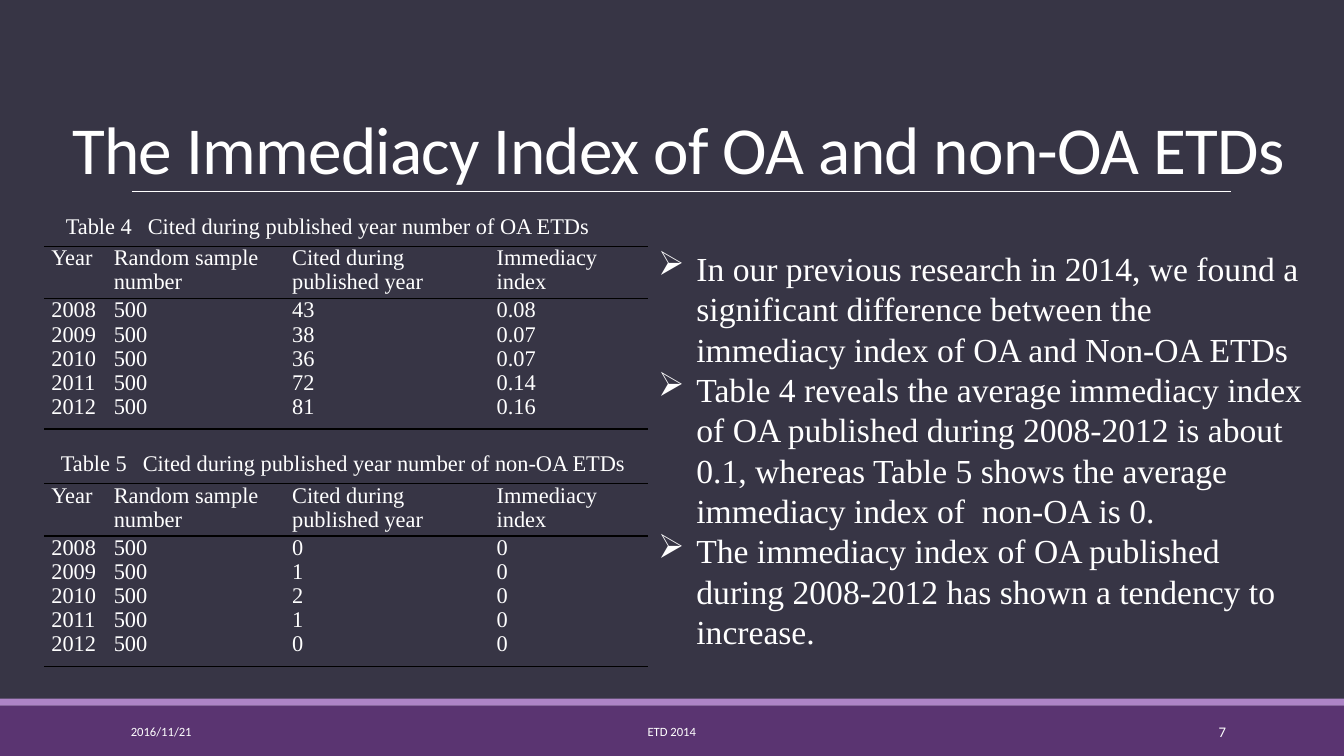
from lxml.etree import SubElement
from pptx import Presentation
from pptx.dml.color import RGBColor
from pptx.enum.shapes import MSO_CONNECTOR as Connector, MSO_SHAPE as Preset
from pptx.enum.text import MSO_ANCHOR as Anchor, MSO_AUTO_SIZE as AutoSize, PP_ALIGN as Align
from pptx.oxml.ns import qn
from pptx.util import Inches, Pt

SLATE = RGBColor(0x37, 0x35, 0x45)
PURPLE = RGBColor(0x5A, 0x34, 0x71)
LILAC = RGBColor(0xAD, 0x84, 0xC6)
WHITE = RGBColor(0xFF, 0xFF, 0xFF)
BLACK = RGBColor(0x00, 0x00, 0x00)

COLUMN_WIDTHS = [4.65, 13.27, 15.22, 11.78]
ROW_HEIGHTS = [6.6, 16.53]
HEADINGS = ["Year", "Random sample number", "Cited during published year", "Immediacy index"]
YEARS = ["2008", "2009", "2010", "2011", "2012"]
SAMPLES = ["500"] * len(YEARS)
TABLES = [
    (3.3, 32.6, [YEARS, SAMPLES, ["43", "38", "36", "72", "81"],
                 ["0.08", "0.07", "0.07", "0.14", "0.16"]]),
    (3.3, 64, [YEARS, SAMPLES, ["0", "1", "2", "1", "0"], ["0"] * len(YEARS)]),
]
CAPTIONS = [
    (4.16, 27.47, "Table 4\tCited during published year number of OA ETDs"),
    (3.79, 58.8, "Table 5\tCited during published year number of non-OA ETDs"),
]
FOOTERS = [
    (9, 20.25, "2016/11/21", 9, Align.LEFT),
    (30.22, 39.53, "ETD 2014", 9, Align.CENTER),
    (81.22, 10.73, "7", 10.5, Align.RIGHT),
]
FINDINGS = [
    "In our previous research in 2014, we found a significant difference between the "
    "immediacy index of OA and Non-OA ETDs",
    "Table 4 reveals the average immediacy index of OA published during 2008-2012 is about "
    "0.1, whereas Table 5 shows the average immediacy index of  non-OA is 0.",
    "The immediacy index of OA published during 2008-2012 has shown a tendency to increase.",
]


def write(frame, lines, size=16, font="Times New Roman", color=WHITE, align=Align.LEFT,
          anchor=Anchor.TOP, spacing=None, tracking=None, bullet=None, indent=0, tab=None):
    frame.word_wrap = True
    frame.vertical_anchor = anchor
    for index, line in enumerate(lines):
        paragraph = frame.paragraphs[0] if index == 0 else frame.add_paragraph()
        paragraph.alignment = align
        paragraph.line_spacing = spacing
        run = paragraph.add_run()
        run.text = line
        run.font.size = Pt(size)
        run.font.name = font
        run.font.color.rgb = color
        if tracking is not None:
            run.font._element.set("spc", str(tracking))
        properties = paragraph._p.get_or_add_pPr()
        if bullet:
            properties.set("marL", str(indent))
            properties.set("indent", str(-indent))
            SubElement(properties, qn("a:buChar"), char=bullet)
        if tab:
            stops = SubElement(properties, qn("a:tabLst"))
            SubElement(stops, qn("a:tab"), pos=str(tab), algn="l")


class Board:
    def __init__(self, presentation):
        self.width = presentation.slide_width
        self.height = presentation.slide_height
        self.slide = presentation.slides.add_slide(presentation.slide_layouts[5])
        self.slide.background.fill.solid()
        self.slide.background.fill.fore_color.rgb = SLATE

    def across(self, percent):
        return round(self.width * percent / 100)

    def down(self, percent):
        return round(self.height * percent / 100)

    def area(self, left, top, width, height):
        return self.across(left), self.down(top), self.across(width), self.down(height)

    def title(self, area, text, **style):
        shape = self.slide.shapes.title
        shape.left, shape.top, shape.width, shape.height = self.area(*area)
        shape.text_frame.auto_size = AutoSize.NONE
        write(shape.text_frame, [text], **style)

    def band(self, area, color):
        shape = self.slide.shapes.add_shape(Preset.RECTANGLE, *self.area(*area))
        shape.shadow.inherit = False
        shape.fill.solid()
        shape.fill.fore_color.rgb = color
        shape.line.fill.background()

    def rule(self, left, right, top):
        connector = self.slide.shapes.add_connector(
            Connector.STRAIGHT, self.across(left), self.down(top),
            self.across(right), self.down(top))
        connector.line.color.rgb = WHITE
        connector.line.width = Pt(0.5)
        SubElement(connector._element.spPr, qn("a:effectLst"))

    def text(self, area, lines, **style):
        shape = self.slide.shapes.add_textbox(*self.area(*area))
        write(shape.text_frame, lines, **style)

    def table(self, left, top, columns):
        area = self.area(left, top, sum(COLUMN_WIDTHS), sum(ROW_HEIGHTS))
        table = self.slide.shapes.add_table(2, len(columns), *area).table
        table.first_row = table.horz_banding = False
        for row, height in zip(table.rows, ROW_HEIGHTS):
            row.height = self.down(height)
        for index, (heading, values) in enumerate(zip(HEADINGS, columns)):
            table.columns[index].width = self.across(COLUMN_WIDTHS[index])
            self.cell(table.cell(0, index), [heading])
            self.cell(table.cell(1, index), values)

    def cell(self, cell, lines):
        cell.margin_left = cell.margin_right = Inches(0.07)
        cell.margin_top = cell.margin_bottom = 0
        write(cell.text_frame, lines, spacing=0.97)
        properties = cell._tc.get_or_add_tcPr()
        for side in ("L", "R"):
            SubElement(SubElement(properties, qn(f"a:ln{side}"), w="0"), qn("a:noFill"))
        for side in ("T", "B"):
            border = SubElement(properties, qn(f"a:ln{side}"), w=str(Pt(1)))
            SubElement(SubElement(border, qn("a:solidFill")), qn("a:srgbClr"), val=str(BLACK))
        cell.fill.background()


def main():
    presentation = Presentation()
    presentation.slide_width = Inches(13.33)
    presentation.slide_height = Inches(7.5)
    board = Board(presentation)

    board.band((0, 93.33, 100, 6.67), PURPLE)
    board.band((0, 92.4, 100, 0.93), LILAC)
    board.rule(9.82, 91.58, 25.33)
    board.title((4.42, 4.4, 92.1, 21.2), "The Immediacy Index of OA and non-OA ETDs",
                size=48, font="Calibri", align=Align.CENTER, anchor=Anchor.BOTTOM,
                spacing=0.85, tracking=-50)
    for left, width, label, size, align in FOOTERS:
        board.text((left, 94.13, width, 5.33), [label], size=size, font="Calibri",
                   align=align, anchor=Anchor.MIDDLE)
    for left, top, caption in CAPTIONS:
        board.text((left, top, 45, 6.27), [caption], tab=board.across(6.1))
    for left, top, columns in TABLES:
        board.table(left, top, columns)
    board.text((48.23, 32.13, 49.73, 55.2), FINDINGS, size=24, spacing=Pt(28.8),
               bullet="➢", indent=Inches(0.38))

    presentation.save("out.pptx")


if __name__ == "__main__":
    main()
